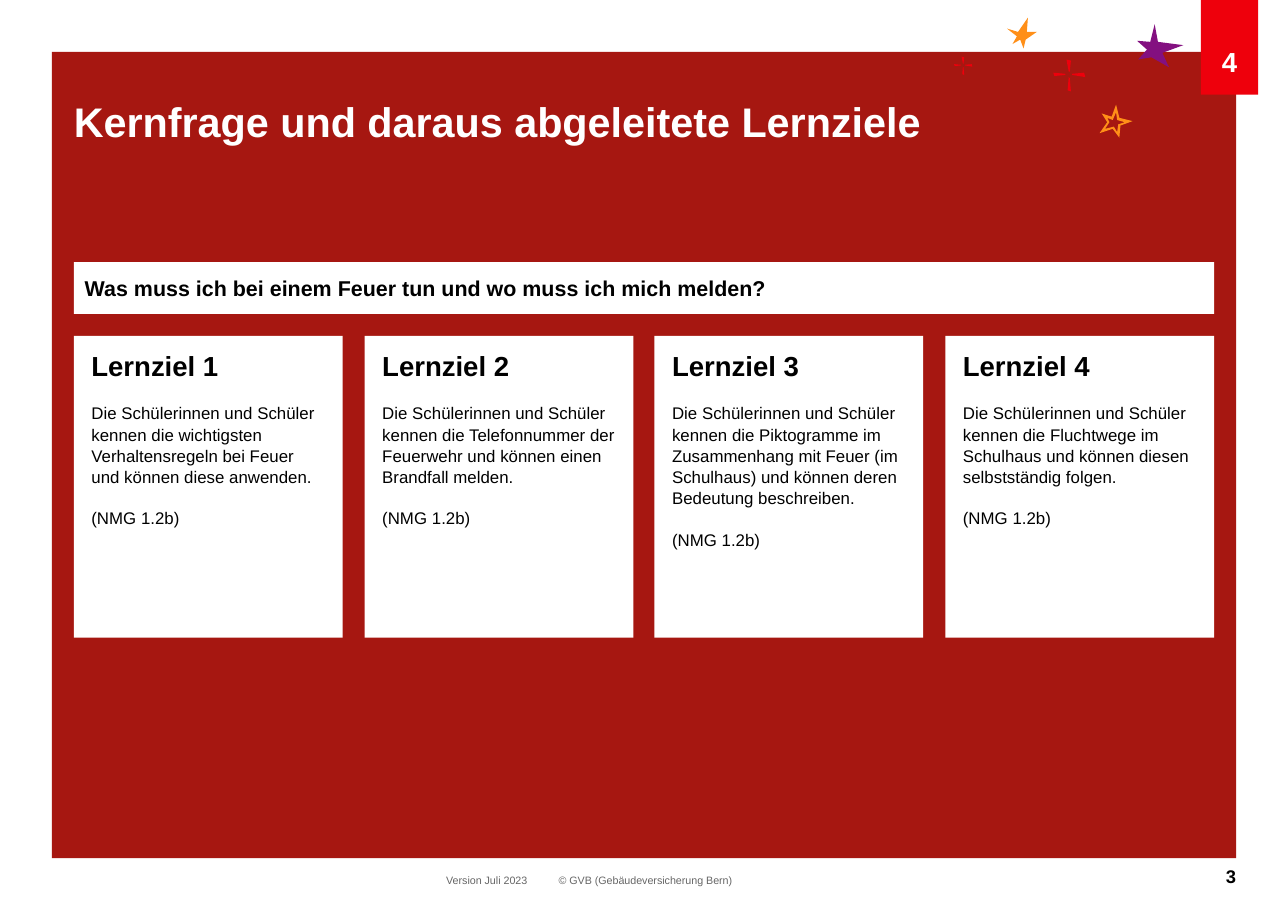
from dataclasses import dataclass

from pptx import Presentation
from pptx import util as u
from pptx.dml.color import RGBColor
from pptx.enum import shapes, text

PX = 9144
DARK_RED = RGBColor(0xA6, 0x17, 0x11)
RED = RGBColor(0xEE, 0x00, 0x0C)
PURPLE = RGBColor(0x83, 0x10, 0x80)
ORANGE = RGBColor(0xFF, 0x8F, 0x18)
GREY = RGBColor(0x66, 0x66, 0x66)
WHITE = RGBColor(0xFF, 0xFF, 0xFF)
BLACK = RGBColor(0x00, 0x00, 0x00)

LEFT = text.PP_ALIGN.LEFT
CENTER = text.PP_ALIGN.CENTER
RIGHT = text.PP_ALIGN.RIGHT
TOP = text.MSO_ANCHOR.TOP
MIDDLE = text.MSO_ANCHOR.MIDDLE
BOTTOM = text.MSO_ANCHOR.BOTTOM

MARGIN, CONTENT_WIDTH = 67, 1035
CARD_TOP, CARD_WIDTH, CARD_HEIGHT = 305, 244, 274
LINE_SPACING = 1.05
BLANK_LINE = 13.3


@dataclass
class Box:
    left: int
    top: int
    width: int
    height: int

    def emu(self) -> list[u.Emu]:
        return [u.Emu(side * PX) for side in (self.left, self.top, self.width, self.height)]


@dataclass
class Line:
    words: str
    size: int
    color: RGBColor = BLACK
    bold: bool = False
    align: text.PP_ALIGN = LEFT
    spacing: float = 1.0
    before: float = 0


@dataclass
class Label:
    box: Box
    line: Line


@dataclass
class Spark:
    color: RGBColor
    contours: list[list[tuple[int, int]]]
    left: int = 0
    top: int = 0
    scale: float = 1.0


CROSS = [
    [(0, -4), (-2, -15), (2, -14), (1, -4)],
    [(1, 2), (2, 14), (-1, 13), (0, 1)],
    [(3, -2), (14, -3), (15, 1), (3, -1)],
    [(-3, -1), (-13, 0), (-14, -3), (-3, -2)],
]
SPARKS = [
    Spark(PURPLE, [[(1044, 38), (1032, 37), (1041, 45), (1033, 54), (1045, 52),
                    (1061, 61), (1055, 48), (1074, 41), (1051, 38), (1048, 22)]]),
    Spark(RED, CROSS, 970, 69),
    Spark(ORANGE, [[(919, 40), (926, 36), (929, 44), (931, 36), (941, 29),
                    (932, 29), (933, 16), (924, 29), (914, 26), (923, 33)]]),
    Spark(RED, CROSS, 874, 60, 0.57),
    Spark(ORANGE, [
        [(1016, 125), (1010, 117), (998, 121), (1005, 111), (1000, 103),
         (1009, 106), (1013, 95), (1016, 107), (1028, 110), (1017, 114)],
        [(1011, 115), (1014, 120), (1015, 113), (1021, 111), (1014, 109),
         (1013, 102), (1010, 109), (1005, 107), (1007, 111), (1003, 117)],
    ]),
]
LABELS = [
    Label(Box(405, 793, 85, 13), Line("Version Juli 2023", 7, GREY)),
    Label(Box(507, 793, 162, 12), Line("© GVB (Gebäudeversicherung Bern)", 7, GREY)),
    Label(Box(1051, 785, 71, 17), Line("3", 12, bold=True, align=RIGHT)),
]
GOALS = [
    "Die Schülerinnen und Schüler kennen die wichtigsten Verhaltensregeln bei Feuer "
    "und können diese anwenden.",
    "Die Schülerinnen und Schüler kennen die Telefonnummer der Feuerwehr und können "
    "einen Brandfall melden.",
    "Die Schülerinnen und Schüler kennen die Piktogramme im Zusammenhang mit Feuer "
    "(im Schulhaus) und können deren Bedeutung beschreiben.",
    "Die Schülerinnen und Schüler kennen die Fluchtwege im Schulhaus und können diesen "
    "selbstständig folgen.",
]


def set_all(target: object, values: dict) -> None:
    for name, value in values.items():
        setattr(target, name, value)


def write(shape, lines: list[Line], insets: tuple[int, int, int, int] = (0, 0, 0, 0),
          anchor: text.MSO_ANCHOR = TOP) -> None:
    frame = shape.text_frame
    left, top, right, bottom = (u.Emu(inset * PX) for inset in insets)
    set_all(frame, {"margin_left": left, "margin_top": top, "margin_right": right,
                    "margin_bottom": bottom, "vertical_anchor": anchor,
                    "word_wrap": True, "auto_size": text.MSO_AUTO_SIZE.NONE})
    for index, line in enumerate(lines):
        paragraph = frame.add_paragraph() if index else frame.paragraphs[0]
        set_all(paragraph, {"alignment": line.align, "line_spacing": line.spacing})
        if index:
            paragraph.space_before = u.Pt(line.before)
        run = paragraph.add_run()
        run.text = line.words
        set_all(run.font, {"name": "Arial", "size": u.Pt(line.size), "bold": line.bold})
        run.font.color.rgb = line.color


def paint(shape, color: RGBColor) -> None:
    shape.shadow.inherit = False
    shape.fill.solid()
    shape.fill.fore_color.rgb = color
    shape.line.fill.background()


def add_panel(slide, box: Box, color: RGBColor):
    panel = slide.shapes.add_shape(shapes.MSO_SHAPE.RECTANGLE, *box.emu())
    paint(panel, color)
    return panel


def add_spark(slide, spark: Spark) -> None:
    contours = [[(round((spark.left + x * spark.scale) * PX),
                  round((spark.top + y * spark.scale) * PX)) for x, y in contour]
                for contour in spark.contours]
    builder = slide.shapes.build_freeform(*contours[0][0])
    for index, contour in enumerate(contours):
        if index:
            builder.move_to(*contour[0])
        builder.add_line_segments(contour[1:], close=True)
    paint(builder.convert_to_shape(), spark.color)


def add_title(slide, box: Box, line: Line) -> None:
    title = slide.shapes.title
    slide.shapes.element.append(title.element)
    set_all(title, dict(zip(("left", "top", "width", "height"), box.emu())))
    write(title, [line])


def add_card(slide, index: int, goal: str) -> None:
    step = (CONTENT_WIDTH - CARD_WIDTH) / (len(GOALS) - 1)
    box = Box(round(MARGIN + index * step), CARD_TOP, CARD_WIDTH, CARD_HEIGHT)
    lines = [
        Line(f"Lernziel {index + 1}", 18, bold=True, spacing=LINE_SPACING),
        Line(goal, 11, spacing=LINE_SPACING, before=BLANK_LINE),
        Line("(NMG 1.2b)", 11, spacing=LINE_SPACING, before=BLANK_LINE),
    ]
    write(add_panel(slide, box, WHITE), lines, (16, 10, 16, 10))


def main() -> None:
    presentation = Presentation()
    set_all(presentation, {"slide_width": u.Emu(1169 * PX), "slide_height": u.Emu(827 * PX)})
    slide = presentation.slides.add_slide(presentation.slide_layouts[5])

    add_panel(slide, Box(47, 47, 1075, 732), DARK_RED)
    for spark in SPARKS:
        add_spark(slide, spark)
    chapter = add_panel(slide, Box(1090, 0, 52, 86), RED)
    write(chapter, [Line("4", 18, WHITE, True, CENTER)], (0, 40, 0, 15), BOTTOM)

    add_title(slide, Box(MARGIN, 85, 807, 58),
              Line("Kernfrage und daraus abgeleitete Lernziele", 27, WHITE, True,
                   spacing=LINE_SPACING))
    question = add_panel(slide, Box(MARGIN, 238, CONTENT_WIDTH, 47), WHITE)
    write(question, [Line("Was muss ich bei einem Feuer tun und wo muss ich mich melden?",
                          14, bold=True)], (10, 5, 10, 5), MIDDLE)
    for index, goal in enumerate(GOALS):
        add_card(slide, index, goal)
    for label in LABELS:
        write(slide.shapes.add_textbox(*label.box.emu()), [label.line])

    presentation.save("out.pptx")


if __name__ == "__main__":
    main()
